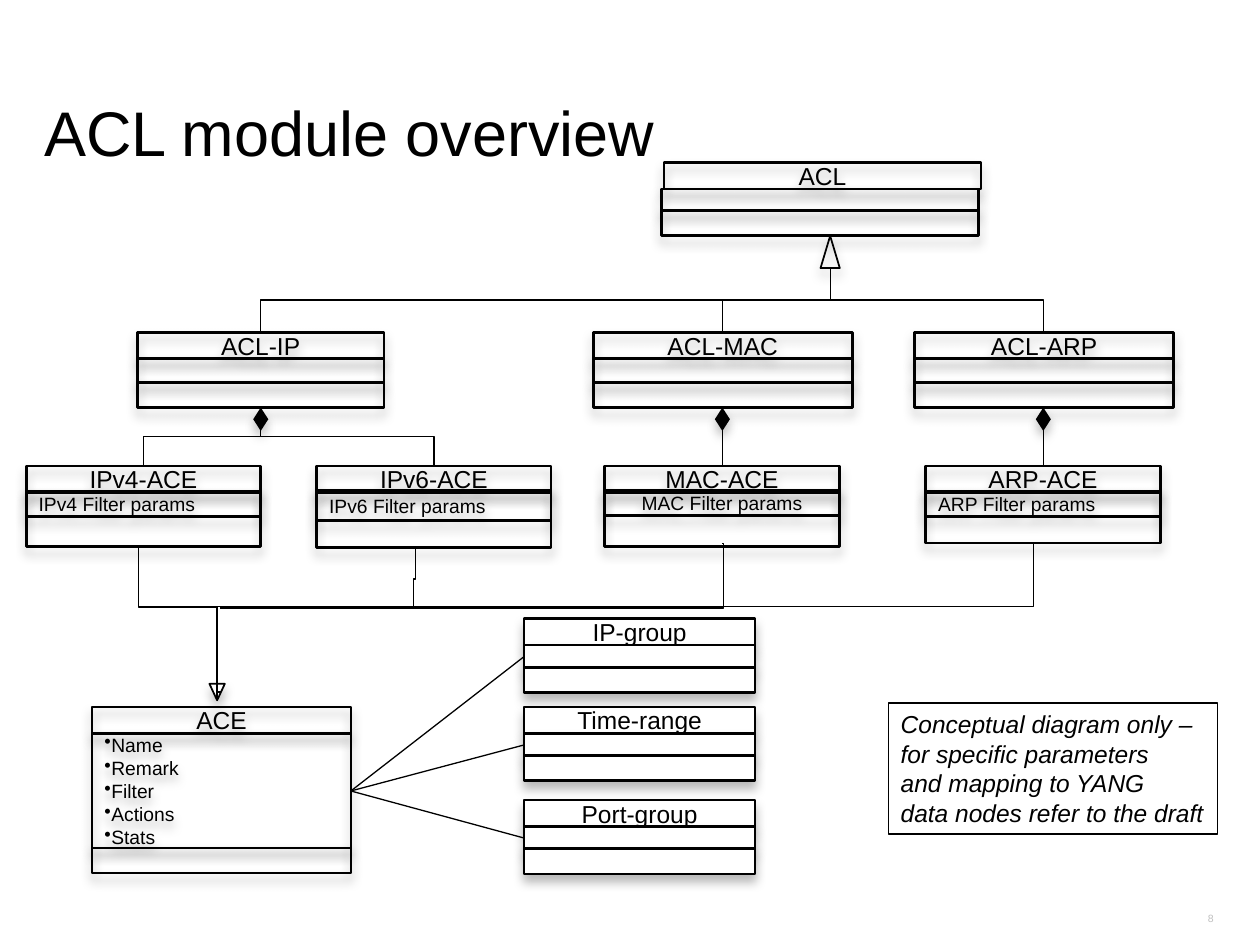
from lxml import etree
from pptx import Presentation
from pptx.dml.color import RGBColor
from pptx.enum import shapes, text
from pptx.oxml import ns
from pptx.util import Pt

BLACK, WHITE, GREY = "000000", "FFFFFF", "C0C0C0"
LEFT, CENTER, RIGHT = text.PP_ALIGN.LEFT, text.PP_ALIGN.CENTER, text.PP_ALIGN.RIGHT
TOP, MIDDLE, BOTTOM = (text.MSO_ANCHOR.TOP, text.MSO_ANCHOR.MIDDLE,
                       text.MSO_ANCHOR.BOTTOM)
RECT, TRIANGLE = shapes.MSO_SHAPE.RECTANGLE, shapes.MSO_SHAPE.ISOSCELES_TRIANGLE


def color(hex_value):
    return RGBColor.from_string(hex_value)


def child(parent, tag, **attributes):
    return etree.SubElement(parent, ns.qn(tag), attributes)


def apply(target, values):
    for name, value in values.items():
        setattr(target, name, value)


class Diagram:
    font = "Arial"
    heading_size, body_size = 14, 11
    heading_height = 15
    border, wire = 1.5, 0.75

    def __init__(self, slide):
        self.slide = slide

    def put_text(self, frame, lines, size, ink=BLACK, align=LEFT, anchor=MIDDLE,
                 wrap=True, italic=None, bullet=None, spacing=None):
        apply(frame, {"word_wrap": wrap, "vertical_anchor": anchor})
        for i, line in enumerate(lines):
            paragraph = frame.add_paragraph() if i else frame.paragraphs[0]
            paragraph.text = line
            apply(paragraph, {"alignment": align, "line_spacing": spacing})
            for run in paragraph.runs:
                apply(run.font, {"name": self.font, "size": Pt(size), "italic": italic})
                run.font.color.rgb = color(ink)
            if bullet:
                properties = paragraph._p.get_or_add_pPr()
                for name in ("marL", "indent"):
                    properties.set(name, "0")
                child(properties, "a:buChar", char=bullet)

    def title(self, words, x, y, w, h):
        heading = self.slide.shapes.title
        apply(heading, {"left": Pt(x), "top": Pt(y), "width": Pt(w), "height": Pt(h)})
        self.put_text(heading.text_frame, [words], 36, anchor=BOTTOM, spacing=0.8)

    def label(self, words, x, y, w, h, **style):
        box = self.slide.shapes.add_textbox(Pt(x), Pt(y), Pt(w), Pt(h))
        self.put_text(box.text_frame, [words], **style)

    def shape(self, kind, x, y, w, h, fill=None, line=None, shadow=True,
              flip=False, parent=None):
        part = (parent or self.slide).shapes.add_shape(kind, Pt(x), Pt(y), Pt(w), Pt(h))
        if fill:
            part.fill.solid()
            part.fill.fore_color.rgb = color(fill)
        else:
            part.fill.background()
        if line:
            part.line.color.rgb = color(BLACK)
            part.line.width = Pt(line)
        else:
            part.line.fill.background()
        part.shadow.inherit = False
        properties = part._element.spPr
        if flip:
            properties.find(ns.qn("a:xfrm")).set("flipV", "1")
        if shadow:
            cast = child(properties.find(ns.qn("a:effectLst")), "a:outerShdw",
                         blurRad=str(int(Pt(6))), dist=str(int(Pt(4))), dir="5400000",
                         rotWithShape="0")
            child(child(cast, "a:srgbClr", val=BLACK), "a:alpha", val="27000")
        return part

    def class_box(self, name, x, y, w, rows, fill=None, body_x=None):
        """Heading plus rows given as (offset, height, lines, style)."""
        head = self.shape(RECT, x, y, w, self.heading_height, fill, self.border)
        self.put_text(head.text_frame, [name], self.heading_size, align=CENTER)
        for offset, height, lines, style in rows:
            row = self.shape(RECT, body_x or x, y + offset, w, height, fill, self.border)
            if lines:
                self.put_text(row.text_frame, lines, self.body_size, **style)

    def diamond(self, x, y):
        group = self.slide.shapes.add_group_shape()
        for top, flip in ((y, False), (y + 6.7, True)):
            self.shape(TRIANGLE, x - 4.3, top, 8.6, 6.7, BLACK, flip=flip, parent=group)

    def connect(self, start, end, kind=shapes.MSO_CONNECTOR.STRAIGHT, adjust=()):
        wire = self.slide.shapes.add_connector(kind, *map(Pt, (*start, *end)))
        wire.line.color.rgb = color(BLACK)
        wire.line.width = Pt(self.wire)
        properties = wire._element.spPr
        child(properties, "a:effectLst")
        if adjust:
            geometry = properties.find(ns.qn("a:prstGeom"))
            geometry.set("prst", f"bentConnector{len(adjust) + 2}")
            guides = geometry.find(ns.qn("a:avLst"))
            for i, share in enumerate(adjust, 1):
                child(guides, "a:gd", name=f"adj{i}", fmla=f"val {round(share * 100000)}")
        return wire

    def elbow(self, start, end, adjust):
        """Elbow that leaves sideways."""
        return self.connect(start, end, shapes.MSO_CONNECTOR.ELBOW, adjust)

    def drop(self, start, end, adjust=(0.5,)):
        """Elbow that leaves downwards: a sideways one turned about its centre."""
        (x1, y1), (x2, y2) = start, end
        across, down = abs(x2 - x1), y2 - y1
        left, top = (x1 + x2 - down) / 2, (y1 + y2 - across) / 2
        wire = self.elbow((left, top), (left + down, top + across), adjust)
        turn = {"rot": "16200000", "flipH": "1"} if x2 > x1 else {"rot": "5400000"}
        for name, value in turn.items():
            wire._element.spPr.find(ns.qn("a:xfrm")).set(name, value)


def main():
    deck = Presentation()
    apply(deck, {"slide_width": Pt(720), "slide_height": Pt(540)})
    diagram = Diagram(deck.slides.add_slide(deck.slide_layouts[5]))

    # Title and page number
    diagram.title("ACL module overview", 18, 33.8, 676, 66.2)
    diagram.label("8", 680.4, 518.4, 20.2, 13.7, size=6, ink=GREY, align=RIGHT,
                  anchor=BOTTOM, wrap=False)

    # Base list and its kinds
    diagram.class_box("ACL", 379.5, 93, 181,
                      [(15, 12.2, None, {}), (27.2, 14.4, None, {})], body_x=378)
    kind_rows = [(15, 13.7, None, {}), (28.7, 14.4, None, {})]
    for name, x, w in (("ACL-IP", 78.5, 141), ("ACL-MAC", 339, 148),
                       ("ACL-ARP", 522.7, 148)):
        diagram.class_box(name, x, 190, w, kind_rows)

    # Entries per kind
    for name, x, offset, params_h, body_h, align in (
            ("IPv4", 15, 14.5, 14.4, 31.7, LEFT), ("IPv6", 181, 14, 17.3, 32.2, LEFT),
            ("MAC", 345.6, 14, 14.4, 31.7, CENTER), ("ARP", 529, 14.5, 14.4, 29.5, LEFT)):
        diagram.class_box(f"{name}-ACE", x, 266.3, 134, [
            (offset, params_h, [f"{name} Filter params"], {"align": align}),
            (14.5, body_h, None, {})])

    # Inheritance tree below the base list
    ip_x, mac_x, arp_x = 149, 412.8, 596.2
    diagram.shape(TRIANGLE, 468.9, 134.8, 11, 18.4, line=1)
    for x in (ip_x, mac_x, arp_x):
        diagram.drop((474.4, 153), (x, 190))

    # Composition of each kind
    for x, entry_x in ((ip_x, 82), (ip_x, 248), (mac_x, mac_x), (arp_x, arp_x)):
        diagram.drop((x, 232.8), (entry_x, 266.2))
    for x in (ip_x, mac_x, arp_x):
        diagram.diamond(x, 232.9)

    # General entry
    diagram.class_box("ACE", 52.6, 404, 148, [
        (15, 65.5, ["Name", "Remark", "Filter", "Actions", "Stats"], {"bullet": "•"}),
        (80.5, 14.4, None, {})])
    diagram.shape(TRIANGLE, 119.7, 390.8, 8.8, 9.4, WHITE, 1, flip=True)
    diagram.drop((79, 312.6), (126.5, 395.4), (0.414, 0.955))
    diagram.drop((237.3, 314), (236.4, 347.8))
    diagram.elbow((412.8, 310.4), (126, 347.5), (-0.002,))
    diagram.elbow((591.8, 310.4), (124, 400), (0.003, 0.406))

    # Groups the entry refers to
    group_rows = [(15, 13.4, None, {}), (27.8, 14.4, None, {})]
    for name, y in (("IP-group", 353.5), ("Time-range", 404), ("Port-group", 457.2)):
        diagram.connect((299.5, y + 21.7), (200.5, 452))
        diagram.class_box(name, 299.5, y, 132, group_rows, WHITE)

    # Remark
    remark = diagram.shape(RECT, 507.6, 401.8, 188, 74.9, WHITE, 0.75, shadow=False)
    diagram.put_text(remark.text_frame, [
        "Conceptual diagram only –",
        "for specific parameters \nand mapping to YANG \ndata nodes refer to the draft",
    ], 14, anchor=TOP, wrap=False, italic=True)

    deck.save("out.pptx")


if __name__ == "__main__":
    main()
